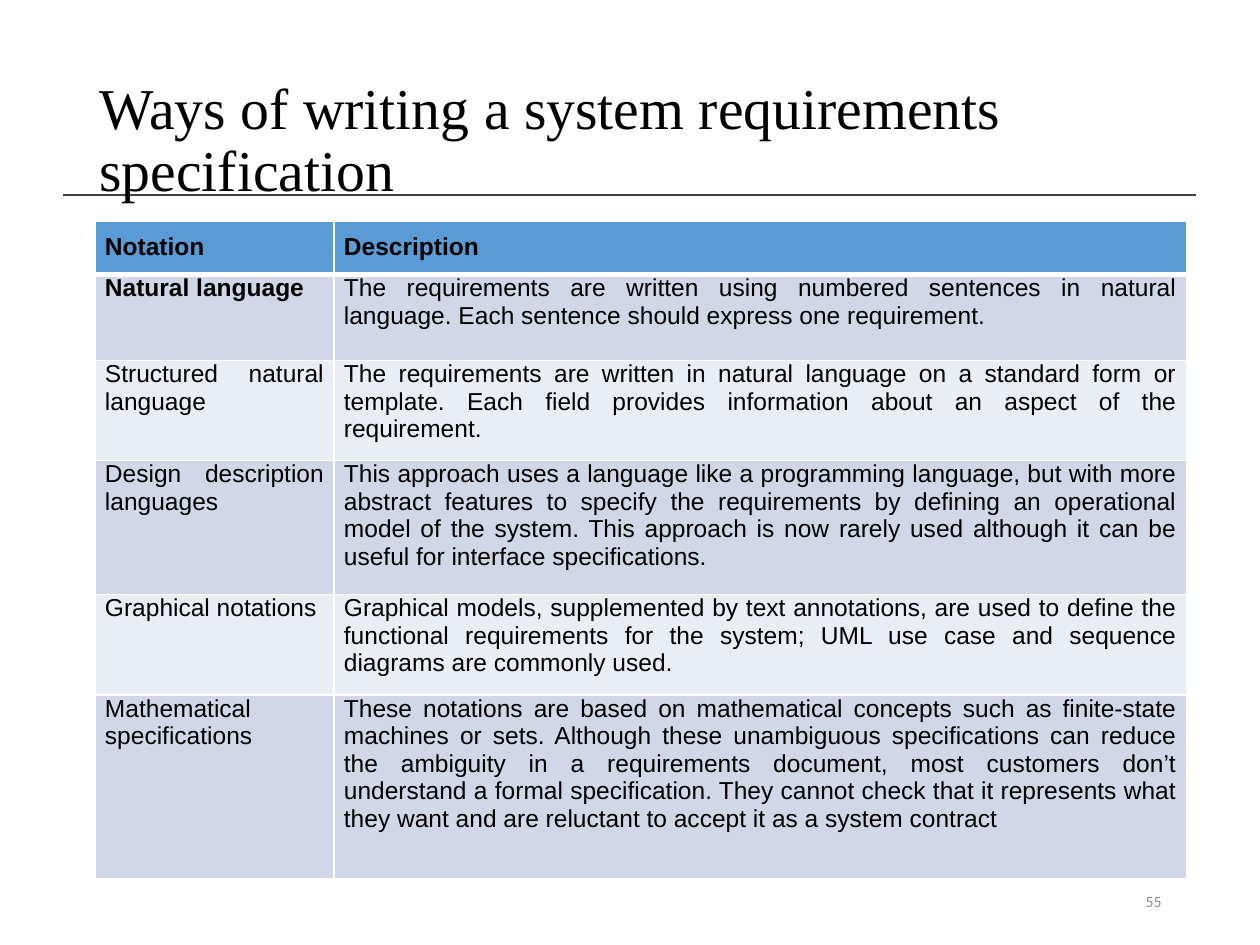
from lxml.etree import SubElement
from pptx import Presentation
from pptx.dml.color import RGBColor
from pptx.enum.shapes import MSO_CONNECTOR
from pptx.enum.text import MSO_ANCHOR, PP_ALIGN
from pptx.oxml.ns import qn
from pptx.util import Pt

PX = 914400 / 126
COLORS = {
    "text": "000000", "rule": "404040", "number": "8C8C8C",
    "header": "5B9BD5", "odd": "D0D8E8", "even": "E9EDF4", "border": "FFFFFF",
}


def px(*lengths):
    """Turn pixel lengths into a list of EMU."""
    return [round(length * PX) for length in lengths]


def write(frame, text, font="Arial", size=14, color="text", bold=False,
          align=PP_ALIGN.LEFT, spacing=None):
    frame.word_wrap = True
    paragraph = frame.paragraphs[0]
    paragraph.alignment = align
    paragraph.line_spacing = spacing
    span = paragraph.add_run()
    span.text = text
    span.font.name = font
    span.font.size = Pt(size)
    span.font.bold = bold
    span.font.color.rgb = RGBColor.from_string(COLORS[color])


deck = Presentation()
deck.slide_width, deck.slide_height = px(1260, 945)
page = deck.slides.add_slide(deck.slide_layouts[6])

rule = page.shapes.add_connector(MSO_CONNECTOR.STRAIGHT, *px(63, 195, 1196, 195))
rule.line.color.rgb = RGBColor.from_string(COLORS["rule"])
rule.line.width = Pt(1)
SubElement(rule._element.spPr, qn("a:effectLst"))

title = page.shapes.add_textbox(*px(87, 50, 1086, 183)).text_frame
title.vertical_anchor = MSO_ANCHOR.MIDDLE
write(title, "Ways of writing a system requirements specification",
      font="Times New Roman", size=33, spacing=0.9)

number = page.shapes.add_textbox(*px(890, 876, 284, 50)).text_frame
number.vertical_anchor = MSO_ANCHOR.MIDDLE
write(number, "55", font="Calibri", size=9, color="number", align=PP_ALIGN.RIGHT)

notations = [
    ("Notation", "Description"),
    ("Natural language",
     "The requirements are written using numbered sentences in natural language. "
     "Each sentence should express one requirement."),
    ("Structured natural language",
     "The requirements are written in natural language on a standard form or template. "
     "Each field provides information about an aspect of the requirement."),
    ("Design description languages",
     "This approach uses a language like a programming language, but with more abstract "
     "features to specify the requirements by defining an operational model of the system. "
     "This approach is now rarely used although it can be useful for interface "
     "specifications."),
    ("Graphical notations",
     "Graphical models, supplemented by text annotations, are used to define the functional "
     "requirements for the system; UML use case and sequence diagrams are commonly used."),
    ("Mathematical specifications",
     "These notations are based on mathematical concepts such as finite-state machines or "
     "sets. Although these unambiguous specifications can reduce the ambiguity in a "
     "requirements document, most customers don’t understand a formal specification. They "
     "cannot check that it represents what they want and are reluctant to accept it as a "
     "system contract"),
]
row_heights = px(51, 86, 96, 134, 96, 184)
column_widths = px(239, 853)

table = page.shapes.add_table(
    len(notations), 2, *px(95, 221), sum(column_widths), sum(row_heights)).table
for column, width in zip(table.columns, column_widths):
    column.width = width

for r, (texts, height) in enumerate(zip(notations, row_heights)):
    table.rows[r].height = height
    fill = "header" if r == 0 else "odd" if r % 2 else "even"
    for c, text in enumerate(texts):
        cell = table.cell(r, c)
        cell.margin_left, cell.margin_right, cell.margin_bottom = px(10, 10, 12)
        cell.margin_top = px(12)[0] if r == 0 else 0
        borders = {"lnL": 1, "lnR": 1, "lnT": 3 if r == 1 else 1, "lnB": 3 if r == 0 else 1}
        for side, width in borders.items():
            line = SubElement(cell._tc.get_or_add_tcPr(), qn(f"a:{side}"), w=str(Pt(width)))
            SubElement(SubElement(line, qn("a:solidFill")), qn("a:srgbClr"),
                       val=COLORS["border"])
        cell.fill.solid()
        cell.fill.fore_color.rgb = RGBColor.from_string(COLORS[fill])
        write(cell.text_frame, text, bold=r == 0 or (r, c) == (1, 0),
              align=PP_ALIGN.LEFT if (r, c) == (0, 0) else PP_ALIGN.JUSTIFY)

deck.save("out.pptx")
